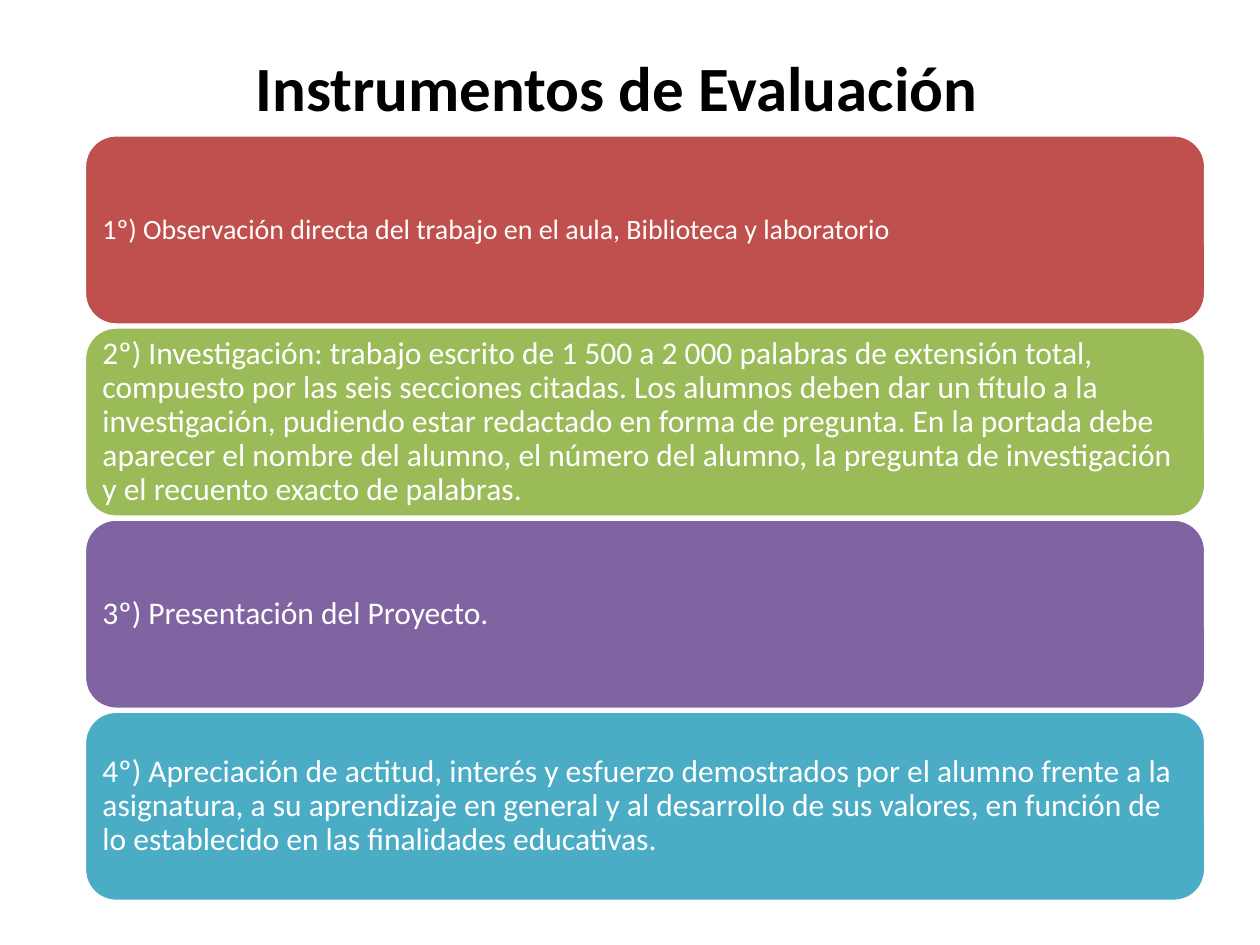
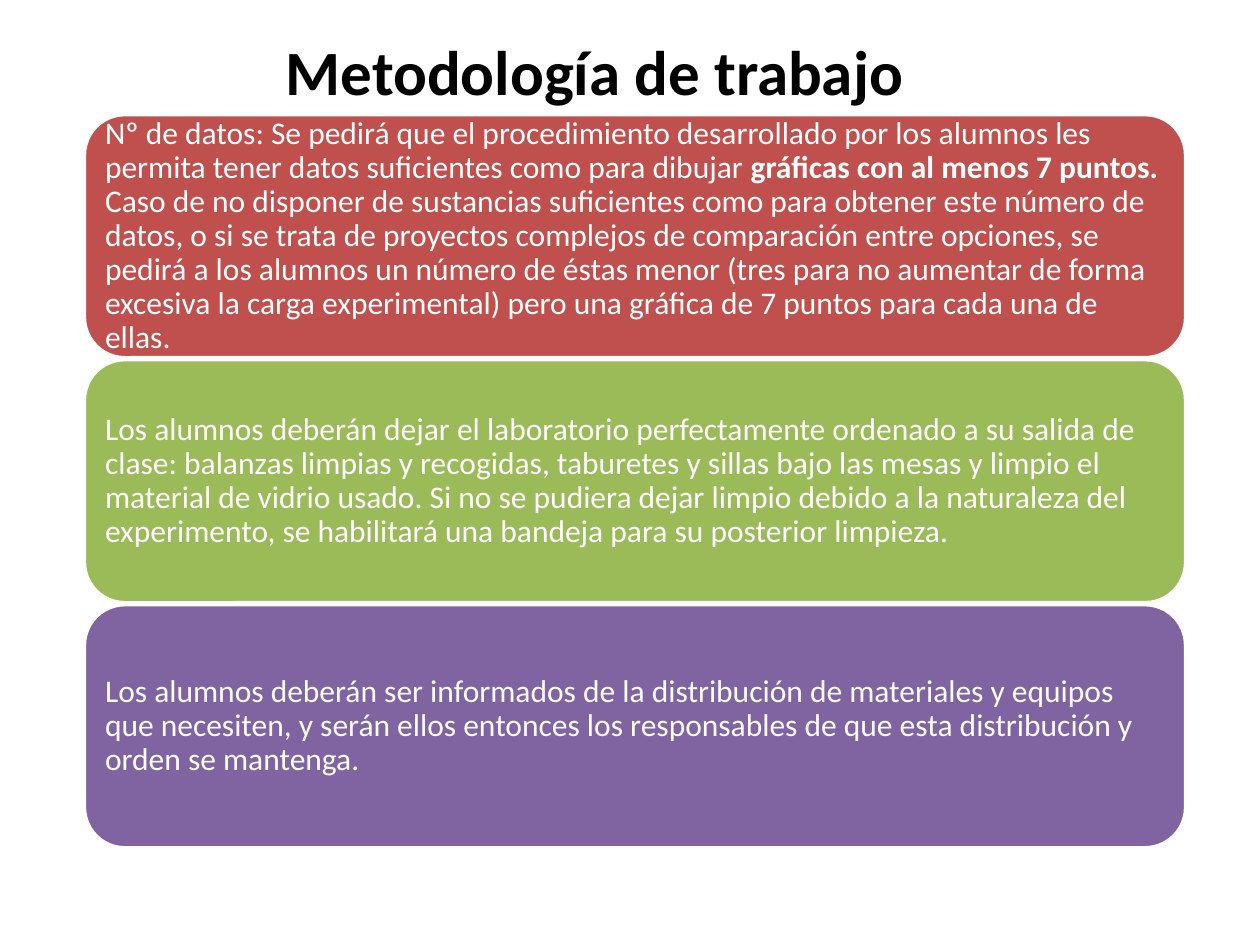
from pptx import Presentation
from pptx.dml.color import RGBColor
from pptx.enum.shapes import MSO_SHAPE as Shape
from pptx.enum.text import MSO_ANCHOR as Anchor, MSO_AUTO_SIZE as Fit, PP_ALIGN as Align
from pptx.util import Inches, Pt

WIDE, HIGH = Inches(10), Inches(7.5)
FONT = "Calibri"
BLACK = RGBColor(0x00, 0x00, 0x00)
WHITE = RGBColor(0xFF, 0xFF, 0xFF)
RED = RGBColor(0xC0, 0x50, 0x4D)
GREEN = RGBColor(0x9B, 0xBB, 0x59)
PURPLE = RGBColor(0x80, 0x64, 0xA2)
BLUE = RGBColor(0x4B, 0xAC, 0xC6)
FILLS = [RED, GREEN, PURPLE, BLUE]
LEFT, GAP = 6.7, 0.2
PAD = Inches(0.07)

TOOLS = [
    (16, ["1º) Observación directa del trabajo en el aula, Biblioteca y laboratorio"]),
    (18, ["2º) Investigación: trabajo escrito de 1 500 a 2 000 palabras de extensión total, "
          "compuesto por las seis secciones citadas. Los alumnos deben dar un título a la "
          "investigación, pudiendo estar redactado en forma de pregunta. En la portada debe "
          "aparecer el nombre del alumno, el número del alumno, la pregunta de investigación "
          "y el recuento exacto de palabras."]),
    (18, ["3º) Presentación del Proyecto."]),
    (18, ["4º) Apreciación de actitud, interés y esfuerzo demostrados por el alumno frente a la "
          "asignatura, a su aprendizaje en general y al desarrollo de sus valores, en función de "
          "lo establecido en las finalidades educativas."]),
]
METHOD = [
    (18, ["Nº de datos: Se pedirá que el procedimiento desarrollado por los alumnos les "
          "permita tener datos suficientes como para dibujar ",
          "gráficas con al menos 7 puntos. ",
          "Caso de no disponer de sustancias suficientes como para obtener este número de "
          "datos, o si se trata de proyectos complejos de comparación entre opciones, se "
          "pedirá a los alumnos un número de éstas menor (tres para no aumentar de forma "
          "excesiva la carga experimental) pero una gráfica de 7 puntos para cada una de ellas."]),
    (18, ["Los alumnos deberán dejar el laboratorio perfectamente ordenado a su salida de "
          "clase: balanzas limpias y recogidas, taburetes y sillas bajo las mesas y limpio el "
          "material de vidrio usado. Si no se pudiera dejar limpio debido a la naturaleza del "
          "experimento, se habilitará una bandeja para su posterior limpieza."]),
    (18, ["Los alumnos deberán ser informados de la distribución de materiales y equipos "
          "que necesiten, y serán ellos entonces los responsables de que esta distribución y "
          "orden se mantenga."]),
]


def area(left, top, width, height):
    """Turn percentages of the slide into lengths."""
    return [int(part * side / 100)
            for part, side in zip((left, top, width, height), (WIDE, HIGH) * 2)]


def style(para, size, color):
    para.font.name = FONT
    para.font.size = Pt(size)
    para.font.color.rgb = color


def add_title(slide, text, left, top, width):
    frame = slide.shapes.add_textbox(*area(left, top, width, 9.47)).text_frame
    frame.word_wrap = False
    frame.auto_size = Fit.SHAPE_TO_FIT_TEXT
    para = frame.paragraphs[0]
    para.text = text
    style(para, 36, BLACK)
    para.font.bold = True


def add_panel(slide, box, fill, size, parts):
    panel = slide.shapes.add_shape(Shape.ROUNDED_RECTANGLE, *box)
    panel.shadow.inherit = False
    panel.fill.solid()
    panel.fill.fore_color.rgb = fill
    panel.line.color.rgb = WHITE
    panel.line.width = Pt(2)
    frame = panel.text_frame
    frame.word_wrap = True
    frame.vertical_anchor = Anchor.MIDDLE
    frame.margin_left = frame.margin_right = PAD
    frame.margin_top = frame.margin_bottom = PAD
    para = frame.paragraphs[0]
    para.alignment = Align.LEFT
    para.line_spacing = 0.9
    style(para, size, WHITE)
    for i, part in enumerate(parts):
        run = para.add_run()
        run.text = part
        if i % 2:
            run.font.bold = True


def add_stack(slide, items, top, width, height):
    for row, (fill, (size, parts)) in enumerate(zip(FILLS, items)):
        box = area(LEFT, top + row * (height + GAP), width, height)
        add_panel(slide, box, fill, size, parts)


def main():
    deck = Presentation()
    deck.slide_width, deck.slide_height = WIDE, HIGH
    blank = deck.slide_layouts[6]

    slide = deck.slides.add_slide(blank)
    add_stack(slide, TOOLS, 14.27, 89, 20.13)
    add_title(slide, "Instrumentos de Evaluación", 19.3, 4.53, 60)

    slide = deck.slides.add_slide(blank)
    add_stack(slide, METHOD, 12.13, 87.4, 25.73)
    add_title(slide, "Metodología de trabajo", 21.7, 2.8, 51.6)

    deck.save("out.pptx")


if __name__ == "__main__":
    main()
